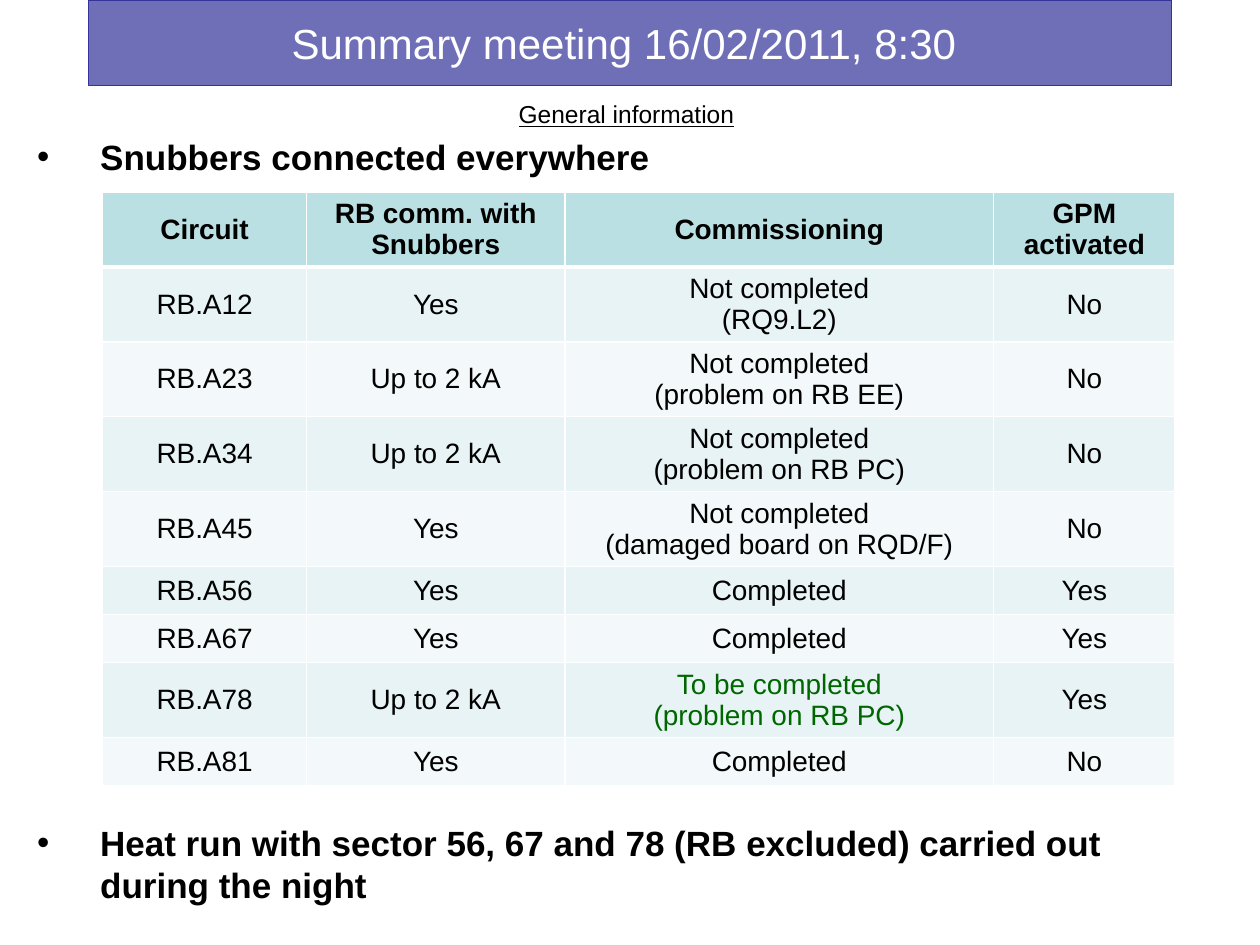
"""Build the summary meeting slide with the circuit commissioning table."""
import pptx
import pptx.util
import pptx.dml.color
import pptx.enum.text
import pptx.oxml
import pptx.oxml.ns

Cm, Pt = pptx.util.Cm, pptx.util.Pt
ALIGN = pptx.enum.text.PP_ALIGN
MIDDLE = pptx.enum.text.MSO_ANCHOR.MIDDLE

TITLE = "Summary meeting 16/02/2011, 8:30"
INTRO = "General information"
POINTS = [
    ("Snubbers connected everywhere", 4),
    ("Heat run with sector 56, 67 and 78 (RB excluded) carried out during the night", 368),
]
HEAD = ["Circuit", "RB comm. with\nSnubbers", "Commissioning", "GPM activated"]
ROWS = [
    ["RB.A12", "Yes", "Not completed\n(RQ9.L2)", "No"],
    ["RB.A23", "Up to 2 kA", "Not completed\n(problem on RB EE)", "No"],
    ["RB.A34", "Up to 2 kA", "Not completed\n(problem on RB PC)", "No"],
    ["RB.A45", "Yes", "Not completed\n(damaged board on RQD/F)", "No"],
    ["RB.A56", "Yes", "Completed", "Yes"],
    ["RB.A67", "Yes", "Completed", "Yes"],
    ["RB.A78", "Up to 2 kA", "To be completed\n(problem on RB PC)", "Yes"],
    ["RB.A81", "Yes", "Completed", "No"],
]
WIDTHS = [4.11, 5.21, 8.64, 3.66]
TALL, SHORT = 1.51, 0.97
INDENT = 1.27
THEME = {
    "font": "Arial",
    "bar": "333399", "alpha": 70, "text": "000000", "light": "FFFFFF",
    "head": "BBE0E3", "bands": ["E7F3F4", "F3F9FA"], "open": "006600",
    "title": 24, "intro": 14, "point": 20, "cell": 16, "rule": 1, "thick": 3,
}


def tint(name):
    return pptx.dml.color.RGBColor.from_string(name)


def style(para, size, color=THEME["text"], bold=False, align=ALIGN.CENTER):
    para.alignment = align
    font = para.font
    font.name, font.size, font.bold = THEME["font"], Pt(size), bold
    font.color.rgb = tint(color)


def add_xml(parent, tag, attrs, inner=""):
    space = pptx.oxml.ns.nsdecls("a")
    node = pptx.oxml.parse_xml(f"<a:{tag} {space} {attrs}>{inner}</a:{tag}>")
    parent.append(node)


def add_title(slide):
    bar = slide.shapes.title
    bar.left, bar.top, bar.width, bar.height = Cm(1.79), Cm(0), Cm(21.82), Cm(1.73)
    bar.fill.solid()
    bar.fill.fore_color.rgb = tint(THEME["bar"])
    color = bar.fill._xPr.find(".//" + pptx.oxml.ns.qn("a:srgbClr"))
    add_xml(color, "alpha", f'val="{THEME["alpha"] * 1000}"')
    bar.line.color.rgb = tint(THEME["bar"])
    bar.line.width = Pt(0.75)
    frame = bar.text_frame
    frame.text = TITLE
    frame.vertical_anchor = MIDDLE
    frame.margin_right = Cm(0.5)
    style(frame.paragraphs[0], THEME["title"], THEME["light"])


def add_points(slide):
    frame = slide.shapes.add_textbox(Cm(0.5), Cm(1.88), Cm(24.26), Cm(13.21)).text_frame
    frame.word_wrap = True
    intro = frame.paragraphs[0]
    intro.text = INTRO
    style(intro, THEME["intro"])
    intro.font.underline = True
    for text, gap in POINTS:
        para = frame.add_paragraph()
        para.text = text
        props = para._p.get_or_add_pPr()
        props.set("marL", str(Cm(INDENT)))
        props.set("indent", str(-Cm(INDENT)))
        add_xml(props, "buFont", f'typeface="{THEME["font"]}"')
        add_xml(props, "buChar", 'char="•"')
        para.space_before = Pt(gap)
        style(para, THEME["point"], bold=True, align=ALIGN.LEFT)


def add_borders(cell, row):
    fill = f'<a:solidFill><a:srgbClr val="{THEME["light"]}"/></a:solidFill>'
    thick = {0: "B", 1: "T"}.get(row)
    for side in "LRTB":
        width = Pt(THEME["thick" if side == thick else "rule"])
        add_xml(cell._tc.get_or_add_tcPr(), "ln" + side, f'w="{width}"', fill)


def add_grid(slide):
    data = [HEAD] + ROWS
    highs = [TALL if any("\n" in text for text in row) else SHORT for row in data]
    grid = slide.shapes.add_table(
        len(data), len(HEAD), Cm(2.07), Cm(3.87), Cm(sum(WIDTHS)), Cm(sum(highs))
    ).table
    grid.horz_banding = False
    for col, width in zip(grid.columns, WIDTHS):
        col.width = Cm(width)
    for row, (texts, high) in enumerate(zip(data, highs)):
        grid.rows[row].height = Cm(high)
        for col, text in enumerate(texts):
            cell = grid.cell(row, col)
            add_borders(cell, row)
            cell.fill.solid()
            band = THEME["bands"][(row - 1) % 2] if row else THEME["head"]
            cell.fill.fore_color.rgb = tint(band)
            cell.vertical_anchor = MIDDLE
            cell.margin_top = cell.margin_bottom = Cm(0.05)
            cell.text_frame.text = text
            color = THEME["open" if text.startswith("To be") else "text"]
            for para in cell.text_frame.paragraphs:
                style(para, THEME["cell"], color, bold=row == 0)


def main():
    deck = pptx.Presentation()
    deck.slide_width, deck.slide_height = Cm(25.4), Cm(19.05)
    slide = deck.slides.add_slide(deck.slide_layouts[5])
    add_title(slide)
    add_points(slide)
    add_grid(slide)
    deck.save("out.pptx")


if __name__ == "__main__":
    main()
